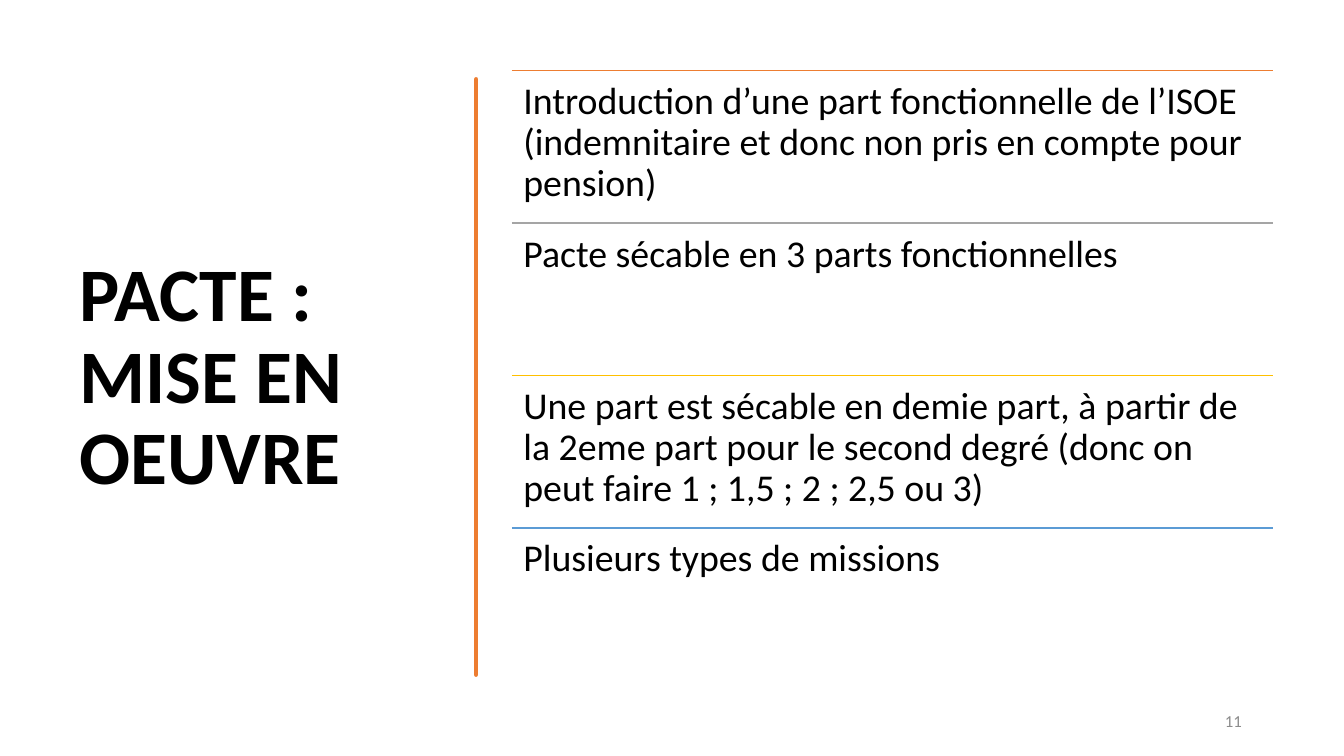
import pptx
import pptx.util
import pptx.dml.color
import pptx.enum.text
import pptx.enum.shapes
import pptx.oxml.ns
import lxml.etree

Cm, Pt = pptx.util.Cm, pptx.util.Pt
ANCHOR = pptx.enum.text.MSO_ANCHOR
ALIGN = pptx.enum.text.PP_ALIGN

TITLE = "PACTE : MISE EN OEUVRE"
PAGE = "11"
ITEMS = [
    ("Introduction d’une part fonctionnelle de l’ISOE (indemnitaire et donc non pris en compte pour pension)", "ED7D31"),
    ("Pacte sécable en 3 parts fonctionnelles", "A5A5A5"),
    ("Une part est sécable en demie part, à partir de la 2eme part pour le second degré "
     "(donc on peut faire 1 ; 1,5 ; 2 ; 2,5 ou 3)", "FFC000"),
    ("Plusieurs types de missions", "5B9BD5"),
]
LIST_LEFT, LIST_TOP, LIST_WIDTH, ROW = 12.9, 1.78, 19.18, 3.84
INSET = 0.29

BAR_X, BAR_COLOR = 12.04, "ED7D31"
RIGHT_EDGE = [(0.03, 2.13), (0.06, 2.9), (0.03, 3.71), (0.01, 4.5), (0.04, 5.74), (0.02, 6.6),
              (0.04, 7.47), (0.05, 8.3), (0.03, 9.04), (0.08, 10), (0.04, 11.07), (0.01, 12),
              (0.03, 12.95), (0.08, 13.9), (0.04, 14.83), (0.02, 16), (0.03, 17.17)]
LEFT_EDGE = [(-0.03, 17.17), (-0.06, 16.3), (-0.03, 15.57), (-0.02, 14.15), (-0.04, 12.12),
             (-0.06, 11.3), (-0.03, 10.54), (-0.05, 9.4), (-0.03, 8.51), (-0.05, 7.4),
             (-0.03, 6.35), (-0.01, 5.4), (-0.07, 4.3), (-0.02, 3.2), (-0.03, 2.13)]


def color(value):
    return pptx.dml.color.RGBColor.from_string(value)


def apply(target, values):
    for name, value in values.items():
        setattr(target, name, value)


def write(sp, text, size, hue="000000", bold=False, frame=None, para=None):
    tf = sp.text_frame
    apply(tf, {"word_wrap": True, **(frame or {})})
    p = tf.paragraphs[0]
    apply(p, para or {})
    r = p.add_run()
    r.text = text
    apply(r.font, {"name": "Calibri", "size": Pt(size), "bold": bold})
    r.font.color.rgb = color(hue)


prs = pptx.Presentation()
apply(prs, {"slide_width": Cm(33.87), "slide_height": Cm(19.05)})
s = prs.slides.add_slide(prs.slide_layouts[5])

title = s.shapes.title
apply(title, {"left": Cm(1.75), "top": Cm(1.78), "width": Cm(9.5), "height": Cm(15.52)})
write(title, TITLE, 54, bold=True,
      frame={"vertical_anchor": ANCHOR.MIDDLE, "auto_size": pptx.enum.text.MSO_AUTO_SIZE.NONE},
      para={"alignment": ALIGN.LEFT, "line_spacing": 0.9})

outline = [(BAR_X + dx, y) for dx, y in RIGHT_EDGE + LEFT_EDGE]
fb = s.shapes.build_freeform(*outline[0], scale=Cm(1))
fb.add_line_segments(outline[1:], close=True)
bar = fb.convert_to_shape()
bar.shadow.inherit = False
bar.fill.solid()
bar.fill.fore_color.rgb = color(BAR_COLOR)
bar.line.color.rgb = color(BAR_COLOR)
bar.line.width = Pt(3.25)
lxml.etree.SubElement(bar.line._get_or_add_ln(), pptx.oxml.ns.qn("a:round"))

number = s.shapes.add_textbox(Cm(23.93), Cm(17.65), Cm(7.62), Cm(1.02))
write(number, PAGE, 12, "8C8C8C", frame={"vertical_anchor": ANCHOR.MIDDLE},
      para={"alignment": ALIGN.RIGHT, "space_after": Pt(6)})

margins = {"margin_" + side: Cm(INSET) for side in ("left", "top", "right", "bottom")}
for i, (text, hue) in enumerate(ITEMS):
    y = Cm(LIST_TOP + i * ROW)
    rule = s.shapes.add_connector(pptx.enum.shapes.MSO_CONNECTOR.STRAIGHT,
                                  Cm(LIST_LEFT), y, Cm(LIST_LEFT + LIST_WIDTH), y)
    rule.line.color.rgb = color(hue)
    rule.line.width = Pt(1)
    lxml.etree.SubElement(rule._element.spPr, pptx.oxml.ns.qn("a:effectLst"))
    box = s.shapes.add_textbox(Cm(LIST_LEFT), y, Cm(LIST_WIDTH), Cm(ROW))
    write(box, text, 27, frame=margins, para={"line_spacing": 0.9})

prs.save("out.pptx")
